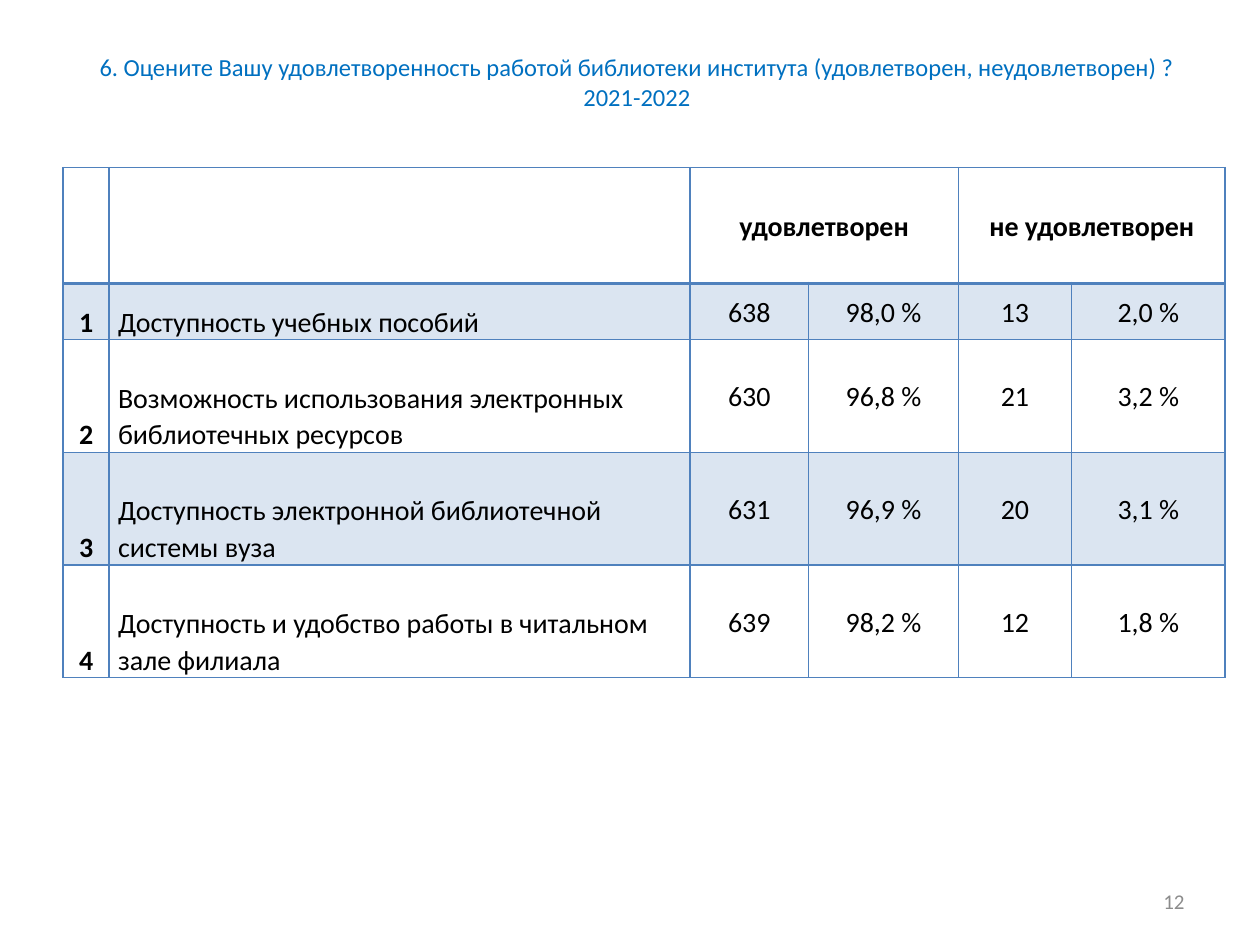
"""Build the slide on satisfaction with the institute library."""
from lxml import etree
from pptx import Presentation
from pptx.dml.color import RGBColor
from pptx.enum.text import MSO_ANCHOR, PP_ALIGN
from pptx.oxml.ns import qn
from pptx.util import Cm, Pt

LEFT, CENTER, RIGHT = PP_ALIGN.LEFT, PP_ALIGN.CENTER, PP_ALIGN.RIGHT
MIDDLE, BOTTOM = MSO_ANCHOR.MIDDLE, MSO_ANCHOR.BOTTOM
BLUE = "4F81BD"


def write(para, text, size, color, align, bold=False):
    para.alignment = align
    for number, line in enumerate(text.splitlines()):
        if number:
            para.add_line_break()
        span = para.add_run()
        span.text = line
        font_format = {"name": "Calibri", "size": Pt(size), "bold": bold}
        for name, value in font_format.items():
            setattr(span.font, name, value)
        span.font.color.rgb = RGBColor.from_string(color)


def add_border(cell, side, width):
    line = etree.SubElement(cell._tc.get_or_add_tcPr(), qn(f"a:ln{side}"), w=str(Pt(width)))
    fill = etree.SubElement(line, qn("a:solidFill"))
    etree.SubElement(fill, qn("a:srgbClr"), val=BLUE)


deck = Presentation()
deck.slide_width, deck.slide_height = Cm(25.4), Cm(19.05)
page = deck.slides.add_slide(deck.slide_layouts[5])

title = page.shapes.title
title_format = {"left": Cm(0.71), "top": Cm(0.76), "width": Cm(24.26), "height": Cm(1.78)}
for name, value in title_format.items():
    setattr(title, name, value)
title.text_frame.vertical_anchor = MIDDLE
heading = """6. Оцените Вашу удовлетворенность работой библиотеки института (удовлетворен, неудовлетворен) ?
2021-2022"""
write(title.text_frame.paragraphs[0], heading, 14, "0070C0", CENTER)

page_number = page.shapes.add_textbox(Cm(18.21), Cm(17.65), Cm(5.92), Cm(1.02))
page_number.text_frame.word_wrap = True
page_number.text_frame.vertical_anchor = MIDDLE
write(page_number.text_frame.paragraphs[0], "12", 12, "8C8C8C", RIGHT)

rows = [
    ["", "", "удовлетворен", "", "не удовлетворен", ""],
    ["1", "Доступность учебных пособий", "638", "98,0 %", "13", "2,0 %"],
    ["2", "Возможность использования электронных библиотечных ресурсов",
     "630", "96,8 %", "21", "3,2 %"],
    ["3", "Доступность электронной библиотечной системы вуза",
     "631", "96,9 %", "20", "3,1 %"],
    ["4", "Доступность и удобство работы в читальном зале филиала",
     "639", "98,2 %", "12", "1,8 %"],
]
widths = [0.93, 11.71, 2.39, 3.02, 2.28, 3.1]
heights = [2.33, 1.14, 2.27, 2.27, 2.27]
frame = page.shapes.add_table(len(rows), len(widths), Cm(1.27), Cm(3.38),
                              Cm(sum(widths)), Cm(sum(heights)))
table = frame.table
table.first_row = table.horz_banding = False
for column, width in zip(table.columns, widths):
    column.width = Cm(width)
for row, height in zip(table.rows, heights):
    row.height = Cm(height)
for first in (2, 4):
    table.cell(0, first).merge(table.cell(0, first + 1))

for r, texts in enumerate(rows):
    for c, text in enumerate(texts):
        cell = table.cell(r, c)
        cell_format = {"margin_left": Cm(0.18), "margin_right": Cm(0.18), "margin_top": 0,
                       "margin_bottom": 0,
                       "vertical_anchor": BOTTOM if r and c < 2 else MIDDLE}
        for name, value in cell_format.items():
            setattr(cell, name, value)
        for side in "LRTB":
            add_border(cell, side, 2 if (r, side) in ((0, "B"), (1, "T")) else 1)
        if r % 2:
            cell.fill.solid()
            cell.fill.fore_color.rgb = RGBColor.from_string(BLUE)
            color = cell._tc.tcPr.find(qn("a:solidFill")).find(qn("a:srgbClr"))
            etree.SubElement(color, qn("a:alpha"), val="20000")
        else:
            cell.fill.background()
        if text:
            para = cell.text_frame.paragraphs[0]
            para.line_spacing, para.space_after = 1.07, Pt(8)
            write(para, text, 16, "000000", LEFT if c == 1 else CENTER, r == 0 or c == 0)

deck.save("out.pptx")
